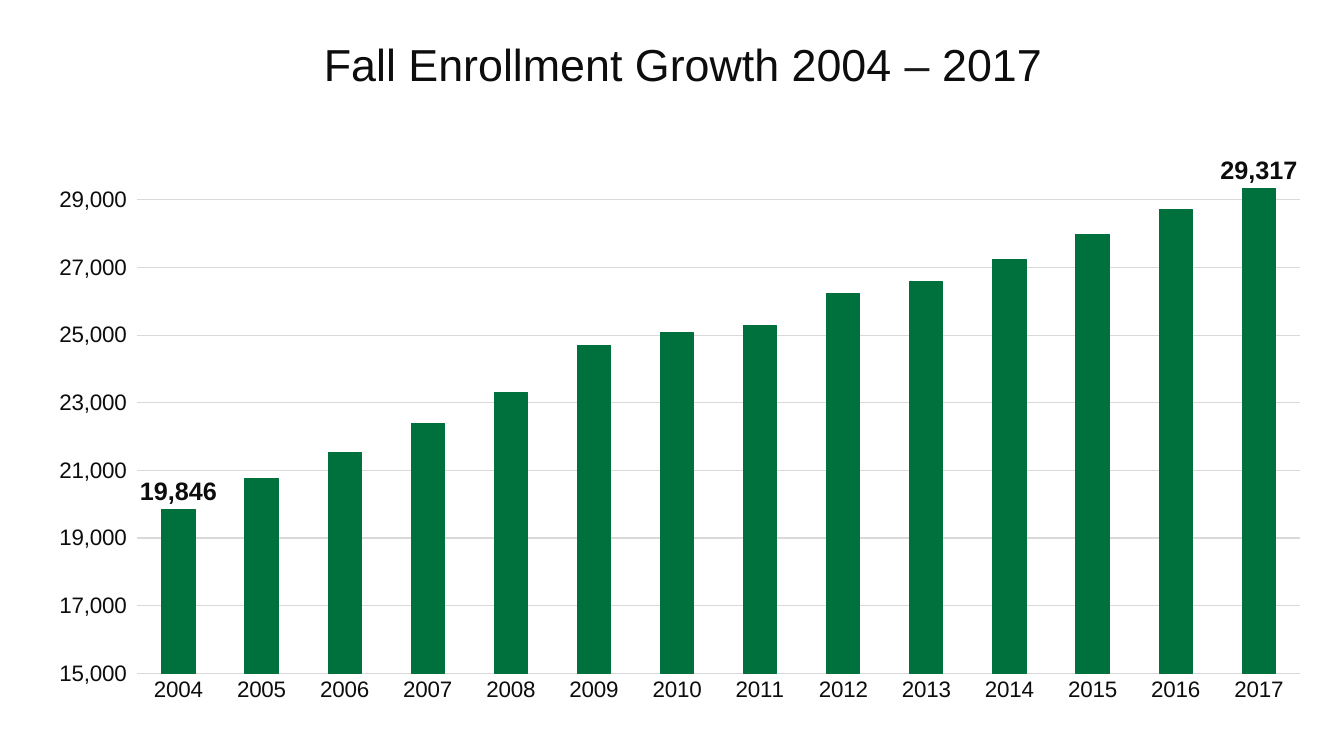
import pptx
import pptx.chart.data
import pptx.dml.color
import pptx.enum.chart
import pptx.enum.text
import pptx.oxml
import pptx.oxml.ns
import pptx.util
from pptx.util import Cm

COLORS = {"ink": "0D0D0D", "dash": "1A1A1A", "grid": "D9D9D9", "bar": "00703C"}
ENROLLMENT = [19846, 20772, 21519, 22388, 23300, 24701, 25063,
              25277, 26232, 26571, 27238, 27983, 28721, 29317]
YEARS = [str(2004 + offset) for offset in range(len(ENROLLMENT))]
PLOT_FRAME = {"x": 0.096, "y": 0.108, "w": 0.888, "h": 0.781}
ACCOUNTING = '_(* #,##0_);_(* \\(#,##0\\);_(* "-"??_);_('


class EnrollmentSlide:
    """Holds the shared style and the slide being built."""

    def __init__(self, deck, font="Arial"):
        self.font = font
        self.slide = deck.slides.add_slide(deck.slide_layouts[5])

    def color(self, name):
        return pptx.dml.color.RGBColor.from_string(COLORS[name])

    def style(self, font, size, color="ink", bold=False):
        font.name = self.font
        font.size = pptx.util.Pt(size)
        font.bold = bold
        font.color.rgb = self.color(color)

    def line(self, line, color, width):
        line.color.rgb = self.color(color)
        line.width = pptx.util.Pt(width)

    def title(self, parts, left, top, width, height, size):
        heading = self.slide.shapes.title
        heading.left, heading.top, heading.width, heading.height = left, top, width, height
        frame = heading.text_frame
        frame.word_wrap = False
        frame.auto_size = pptx.enum.text.MSO_AUTO_SIZE.NONE
        frame.vertical_anchor = pptx.enum.text.MSO_ANCHOR.MIDDLE
        paragraph = frame.paragraphs[0]
        paragraph.alignment = pptx.enum.text.PP_ALIGN.CENTER
        for text, color in parts:
            run = paragraph.add_run()
            run.text = text
            self.style(run.font, size, color)

    def columns(self, years, counts, left, top, width, height):
        enrollment = pptx.chart.data.CategoryChartData(number_format="#,##0")
        enrollment.categories = years
        enrollment.add_series("Series 1", counts)
        chart = self.slide.shapes.add_chart(
            pptx.enum.chart.XL_CHART_TYPE.COLUMN_CLUSTERED,
            left, top, width, height, enrollment).chart
        chart.has_legend = False
        chart.has_title = False
        self.style(chart.font, 10)
        self.axes(chart)
        self.place_plot(chart)
        plot = chart.plots[0]
        plot.gap_width = 150
        plot.vary_by_categories = False
        students = plot.series[0]
        students.format.fill.solid()
        students.format.fill.fore_color.rgb = self.color("bar")
        self.line(students.format.line, "bar", 0.75)
        students.data_labels.show_value = False
        for index in (0, len(counts) - 1):
            label = students.points[index].data_label
            self.style(label.font, 18, bold=True)
            label.position = pptx.enum.chart.XL_LABEL_POSITION.OUTSIDE_END

    def axes(self, chart):
        for axis in (chart.category_axis, chart.value_axis):
            self.style(axis.tick_labels.font, 16)
            axis.major_tick_mark = pptx.enum.chart.XL_TICK_MARK.NONE
            axis.minor_tick_mark = pptx.enum.chart.XL_TICK_MARK.NONE
        self.line(chart.category_axis.format.line, "grid", 1)
        scale = chart.value_axis
        scale.minimum_scale, scale.maximum_scale, scale.major_unit = 15000, 30000, 2000
        scale.format.line.fill.background()
        scale.tick_labels.number_format = ACCOUNTING
        scale.tick_labels.number_format_is_linked = False
        scale.has_major_gridlines = True
        self.line(scale.major_gridlines.format.line, "grid", 0.75)

    def place_plot(self, chart):
        area = chart.element.find(".//" + pptx.oxml.ns.qn("c:plotArea"))
        for layout in area.findall(pptx.oxml.ns.qn("c:layout")):
            area.remove(layout)
        modes = '<c:xMode val="edge"/><c:yMode val="edge"/>'
        sizes = "".join(f'<c:{side} val="{share}"/>' for side, share in PLOT_FRAME.items())
        area.insert(0, pptx.oxml.parse_xml(
            f'<c:layout {pptx.oxml.ns.nsdecls("c")}><c:manualLayout>'
            f'<c:layoutTarget val="inner"/>{modes}{sizes}</c:manualLayout></c:layout>'))


def main():
    deck = pptx.Presentation()
    deck.slide_width, deck.slide_height = Cm(33.87), Cm(19.05)
    growth = EnrollmentSlide(deck)
    growth.columns(YEARS, ENROLLMENT, Cm(0.28), Cm(2.41), Cm(33.02), Cm(16.38))
    growth.title([("Fall Enrollment Growth 2004", "ink"), (" – ", "dash"), ("2017", "ink")],
                 Cm(7.85), Cm(0.79), Cm(18.72), Cm(1.63), 32)
    deck.save("out.pptx")


if __name__ == "__main__":
    main()
